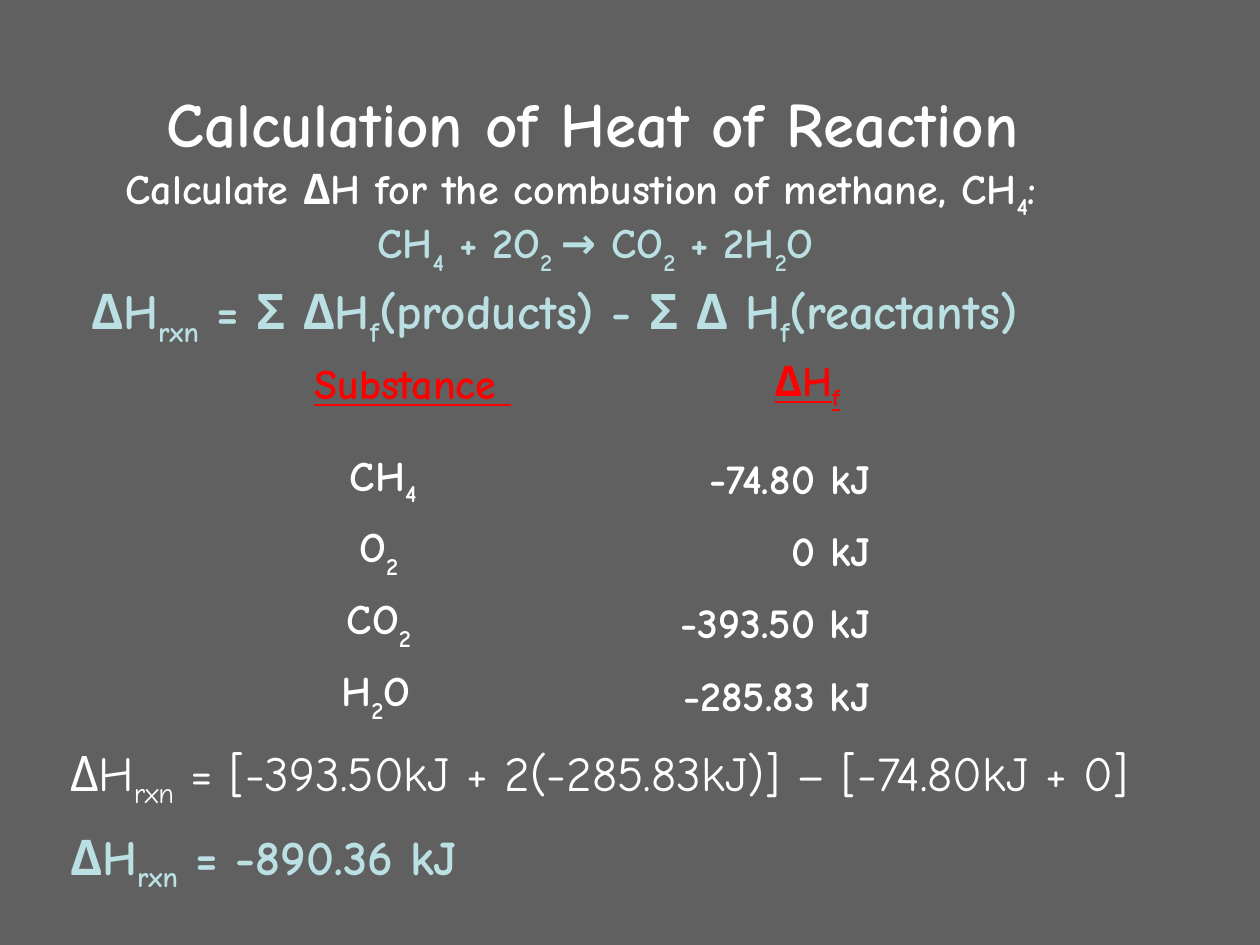
from pptx import Presentation
from pptx.dml.color import RGBColor
from pptx.enum.text import MSO_ANCHOR, MSO_AUTO_SIZE, PP_ALIGN
from pptx.oxml.ns import qn
from pptx.util import Pt

FONT = "Comic Neue"
WHITE, PALE, RED, GREY = "FFFFFF", "BBE0E3", "FF0000", "606060"
NO_STYLE = "{2D5ABB26-0587-4C30-8999-92F81FD0307C}"
SUBSTANCES = [
    ("CH|4", "-74.80 kJ "),
    ("O|2 ", "0 kJ "),
    ("CO|2 ", "-393.50 kJ "),
    ("H|2|O ", "-285.83 kJ "),
]


def color(value):
    """Turn a hex string into a colour."""
    return RGBColor.from_string(value)


def write(para, text, size, shade, align=PP_ALIGN.LEFT, bold=True, drop=-25, underline=None):
    """Write a formula whose every second part, split at bars, is a subscript."""
    para.alignment = align
    font = para.font
    font.name, font.size, font.bold, font.underline = FONT, Pt(size), bold, underline
    font.color.rgb = color(shade)
    for index, part in enumerate(text.split("|")):
        span = para.add_run()
        span.text = part
        if index % 2:
            span.font._element.set("baseline", str(drop * 1000))


def add_line(page, left, top, width, height, text, size, shade, **style):
    """Add one line of text that keeps its natural width."""
    box = page.shapes.add_textbox(Pt(left), Pt(top), Pt(width), Pt(height))
    frame = box.text_frame
    frame.word_wrap = False
    frame.auto_size = MSO_AUTO_SIZE.SHAPE_TO_FIT_TEXT
    write(frame.paragraphs[0], text, size, shade, **style)


def add_title(page, text):
    """Add the centred heading."""
    box = page.shapes.add_textbox(Pt(39), Pt(31), Pt(612), Pt(78))
    box.text_frame.word_wrap = True
    box.text_frame.vertical_anchor = MSO_ANCHOR.MIDDLE
    write(box.text_frame.paragraphs[0], text, 36, WHITE, PP_ALIGN.CENTER)


def add_plain_table(page, left, top, widths, heights):
    """Add a table without fills or rules, centred vertically."""
    table = page.shapes.add_table(
        len(heights), len(widths), Pt(left), Pt(top), Pt(sum(widths)), Pt(sum(heights))
    ).table
    table.first_row = table.horz_banding = False
    table._tbl.tblPr.find(qn("a:tableStyleId")).text = NO_STYLE
    for column, width in zip(table.columns, widths):
        column.width = Pt(width)
    for row, height in zip(table.rows, heights):
        row.height = Pt(height)
    for cell in table.iter_cells():
        cell.fill.background()
        cell.vertical_anchor = MSO_ANCHOR.MIDDLE
    return table


def add_question(page):
    """Add the question and the balanced equation."""
    cell = add_plain_table(page, 39, 85, [611, 37], [84]).cell(0, 0)
    cell.margin_right = Pt(32)
    question = cell.text_frame.paragraphs[0]
    write(question, "Calculate ΔH for the combustion of methane, CH|4|:", 24, WHITE, PP_ALIGN.CENTER)
    equation = cell.text_frame.add_paragraph()
    write(equation, "CH|4| + 2O|2 |→ CO|2| + 2H|2|O ", 24, PALE, PP_ALIGN.CENTER, drop=-30)
    equation._p.get_or_add_pPr().set("marL", str(Pt(25)))


def add_heats(page):
    """Add the table of heats of formation."""
    table = add_plain_table(page, 87, 186.5, [264, 162], [68] + [41] * len(SUBSTANCES))
    for row, texts in enumerate([("Substance ", "ΔH|f"), *SUBSTANCES]):
        header = row == 0
        for column, align in enumerate((PP_ALIGN.CENTER, PP_ALIGN.RIGHT)):
            write(
                table.cell(row, column).text_frame.paragraphs[0], texts[column], 24,
                RED if header else WHITE, align,
                drop=-25 if row < 2 else -30, underline=header,
            )
    table.cell(0, 0).margin_left = Pt(41)
    table.cell(0, 1).margin_right = Pt(33)


def main():
    """Build the slide and save the deck."""
    deck = Presentation()
    deck.slide_width, deck.slide_height = Pt(720), Pt(540)
    page = deck.slides.add_slide(deck.slide_layouts[6])
    page.background.fill.solid()
    page.background.fill.fore_color.rgb = color(GREY)
    add_title(page, "Calculation of Heat of Reaction ")
    add_question(page)
    add_line(page, 45, 157, 623, 41, "ΔH|rxn| = Σ ΔH|f|(products) - Σ Δ H|f|(reactants)", 28, PALE)
    add_heats(page)
    add_line(page, 33, 420.5, 690, 41,
             "ΔH|rxn| = [-393.50kJ + 2(-285.83kJ)] – [-74.80kJ + 0]", 28, WHITE, bold=False)
    add_line(page, 33, 468.5, 286, 41, "ΔH|rxn| = -890.36 kJ", 28, PALE)
    deck.save("out.pptx")


if __name__ == "__main__":
    main()
